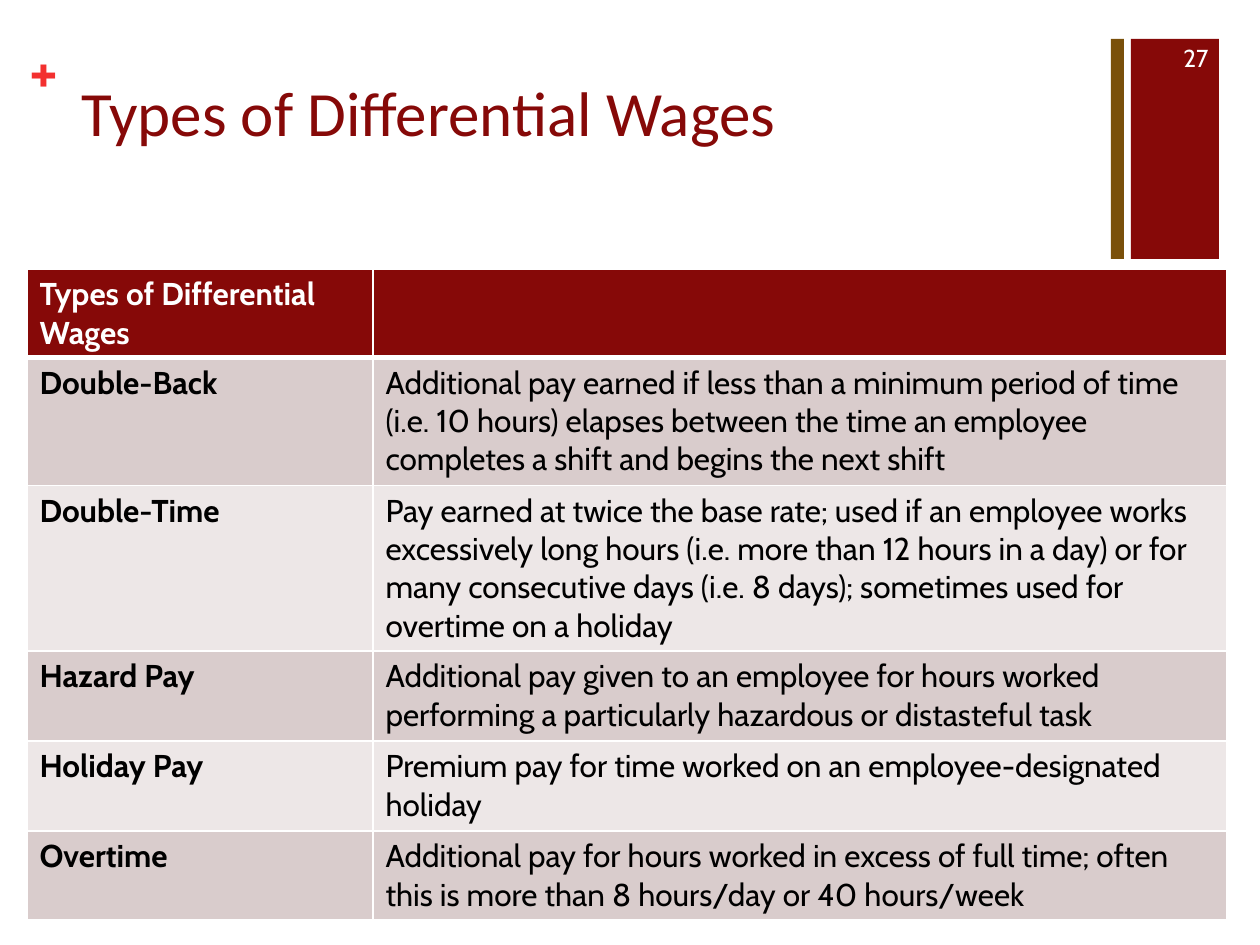
from dataclasses import dataclass
from lxml.etree import SubElement
from pptx import Presentation
from pptx.dml.color import RGBColor as RGB
from pptx.enum.shapes import MSO_SHAPE as Shape
from pptx.enum.text import MSO_ANCHOR as Anchor, PP_ALIGN as Align
from pptx.oxml.ns import qn
from pptx.util import Emu, Pt


@dataclass(frozen=True)
class Theme:
    red: str = "860908"
    gold: str = "7A500A"
    plus: str = "F3302F"
    white: str = "FFFFFF"
    black: str = "000000"
    bands: tuple = ("D9CCCC", "EDE7E7")
    head: str = "Calibri"
    body: str = "Cabin"
    big: int = 36
    mid: int = 18
    small: int = 14


T = Theme()
TITLE = "Types of Differential Wages"
NUMBER = "27"
WAGES = [
    (TITLE, ""),
    ("Double-Back", "Additional pay earned if less than a minimum period of time "
     "(i.e. 10 hours) elapses between the time an employee completes a shift "
     "and begins the next shift"),
    ("Double-Time", "Pay earned at twice the base rate; used if an employee works "
     "excessively long hours (i.e. more than 12 hours in a day) or for many "
     "consecutive days (i.e. 8 days); sometimes used for overtime on a holiday"),
    ("Hazard Pay", "Additional pay given to an employee for hours worked "
     "performing a particularly hazardous or distasteful task"),
    ("Holiday Pay", "Premium pay for time worked on an employee-designated holiday"),
    ("Overtime", "Additional pay for hours worked in excess of full time; often "
     "this is more than 8 hours/day or 40 hours/week"),
]
COLS = (346, 854)
ROWS = (88, 128, 166, 90, 90, 89)
BARS = [((1131, 39, 88, 220), T.red), ((1111, 39, 13, 220), T.gold)]


def px(n):
    return Emu(round(n * 914400 / 126))


def style(frame, size, color, font=T.body, bold=False):
    for para in frame.paragraphs:
        for run in para.runs:
            run.font.size, run.font.name, run.font.bold = Pt(size), font, bold
            run.font.color.rgb = RGB.from_string(color)


def add_bar(slide, box, color):
    bar = slide.shapes.add_shape(Shape.RECTANGLE, *map(px, box))
    bar.shadow.inherit = False
    bar.fill.solid()
    bar.fill.fore_color.rgb = RGB.from_string(color)
    bar.line.fill.background()


def add_text(slide, box, text, size, color, **kind):
    frame = slide.shapes.add_textbox(*map(px, box)).text_frame
    frame.word_wrap = True
    frame.text = text
    style(frame, size, color, **kind)
    return frame


def add_edges(cell, low):
    """Draw white cell borders; low is the bottom width in points."""
    props = cell._tc.get_or_add_tcPr()
    sides = {"a:lnL": 1, "a:lnR": 1, "a:lnT": 1, "a:lnB": low}
    for side, width in sides.items():
        line = SubElement(props, qn(side), w=str(Pt(width)))
        fill = SubElement(line, qn("a:solidFill"))
        SubElement(fill, qn("a:srgbClr"), val=T.white)


def add_wages(slide):
    box = map(px, (27, 269, sum(COLS), sum(ROWS)))
    table = slide.shapes.add_table(len(WAGES), len(COLS), *box).table
    for col, width in zip(table.columns, COLS):
        col.width = px(width)
    for r, (row, height) in enumerate(zip(table.rows, ROWS)):
        row.height = px(height)
        top = r == 0
        back = T.red if top else T.bands[(r - 1) % 2]
        for c, cell in enumerate(row.cells):
            # Borders must come before the fill in the cell properties.
            add_edges(cell, 3 if top else 1)
            cell.fill.solid()
            cell.fill.fore_color.rgb = RGB.from_string(back)
            cell.text = WAGES[r][c]
            style(cell.text_frame, T.mid, T.white if top else T.black,
                  bold=top or c == 0)


def main():
    deck = Presentation()
    deck.slide_width, deck.slide_height = px(1260), px(945)
    slide = deck.slides.add_slide(deck.slide_layouts[6])
    for box, color in BARS:
        add_bar(slide, box, color)

    plus = add_text(slide, (30, 31, 37, 77), "+", T.big, T.plus, bold=True)
    plus.margin_left = plus.margin_right = 0
    plus.margin_top = plus.margin_bottom = 0
    add_text(slide, (69, 67, 1041, 154), TITLE, T.big, T.red, font=T.head)
    add_wages(slide)

    page = add_text(slide, (1144, 33, 77, 50), NUMBER, T.small, T.white)
    page.vertical_anchor = Anchor.MIDDLE
    page.paragraphs[0].alignment = Align.RIGHT
    deck.save("out.pptx")


if __name__ == "__main__":
    main()
